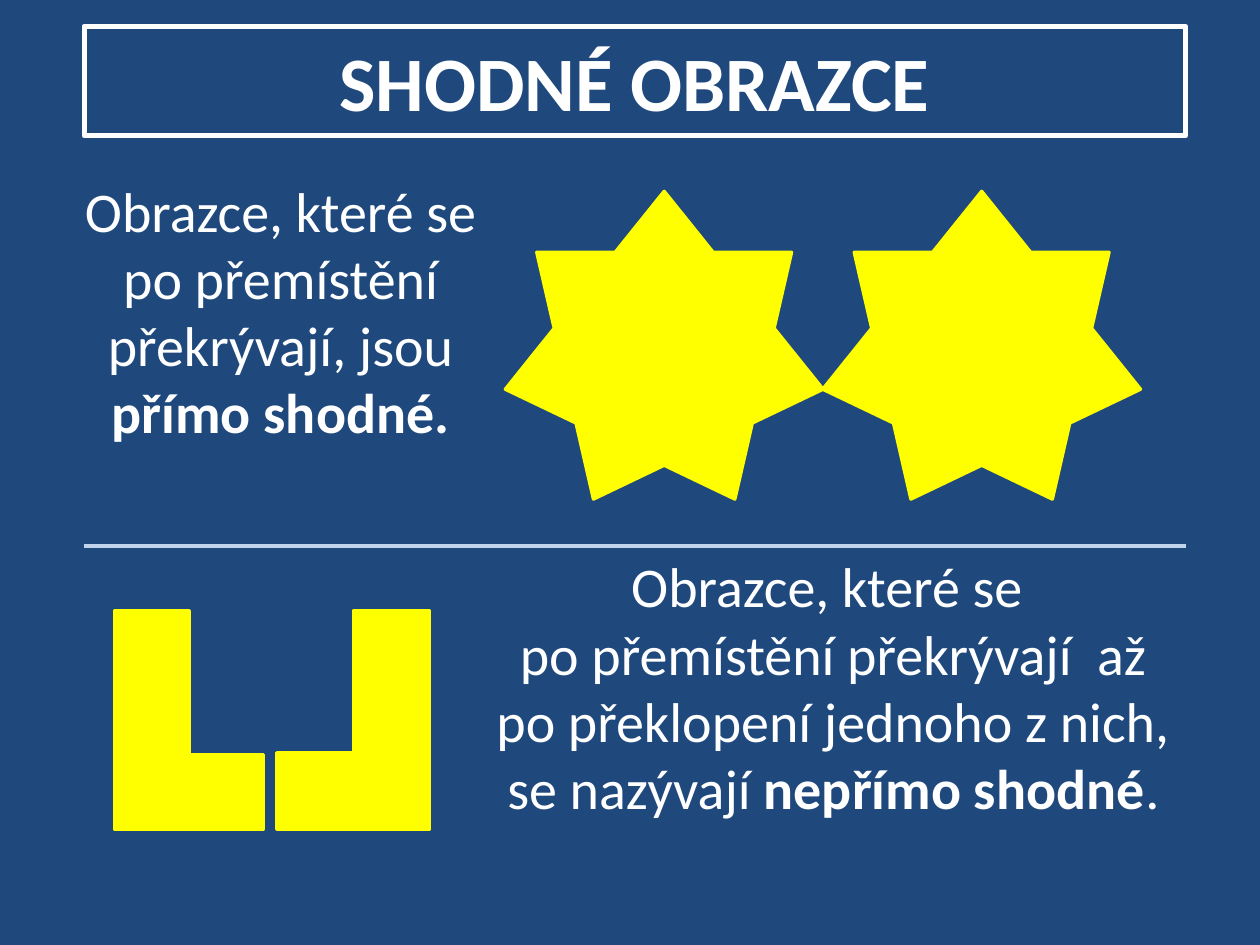
from lxml import etree
from pptx import Presentation
from pptx.dml.color import RGBColor
from pptx.enum.shapes import MSO_CONNECTOR, MSO_SHAPE
from pptx.enum.text import MSO_ANCHOR, MSO_AUTO_SIZE, PP_ALIGN
from pptx.oxml.ns import qn
from pptx.util import Cm, Pt

STAR, RECTANGLE = MSO_SHAPE.STAR_7_POINT, MSO_SHAPE.RECTANGLE
STRAIGHT = MSO_CONNECTOR.STRAIGHT
MIDDLE = MSO_ANCHOR.MIDDLE
FIT_SHAPE = MSO_AUTO_SIZE.SHAPE_TO_FIT_TEXT
CENTER = PP_ALIGN.CENTER

NAVY = RGBColor(0x1F, 0x49, 0x7D)
YELLOW = RGBColor(0xFF, 0xFF, 0x00)
WHITE = RGBColor(0xFF, 0xFF, 0xFF)
PALE_BLUE = RGBColor(0xC1, 0xD4, 0xEC)

LEFT, RIGHT = Cm(1.7), Cm(23.9)
DIVIDER_TOP = Cm(11)


def add_figure(kind, left, top, width, height):
    figure = slide.shapes.add_shape(kind, Cm(left), Cm(top), Cm(width), Cm(height))
    figure.shadow.inherit = False
    figure.fill.solid()
    figure.fill.fore_color.rgb = YELLOW
    figure.line.color.rgb = YELLOW
    figure.line.width = Pt(2)
    return figure


def write(paragraph, size, *pieces):
    paragraph.alignment = CENTER
    paragraph.font.name = "Calibri"
    paragraph.font.size = Pt(size)
    paragraph.font.color.rgb = WHITE
    for text, bold in pieces:
        run = paragraph.add_run()
        run.text = text
        run.font.bold = bold


prs = Presentation()
prs.slide_width, prs.slide_height = Cm(25.4), Cm(19.05)
slide = prs.slides.add_slide(prs.slide_layouts[6])
slide.background.fill.solid()
slide.background.fill.fore_color.rgb = NAVY

star_width = 6.4
for column in range(2):
    add_figure(STAR, 10.19 + column * star_width, 3.86, star_width, 6.2)

title = slide.shapes.add_shape(RECTANGLE, LEFT, Cm(0.53), RIGHT - LEFT, Cm(2.21))
title.shadow.inherit = False
title.fill.background()
title.line.color.rgb = WHITE
title.line.width = Pt(3)
title.text_frame.vertical_anchor = MIDDLE
write(title.text_frame.paragraphs[0], 44, ("SHODNÉ OBRAZCE", True))

direct = slide.shapes.add_textbox(Cm(1.14), Cm(3.43), Cm(9.04), Cm(7.19)).text_frame
direct.word_wrap = True
write(direct.paragraphs[0], 32,
      ("Obrazce, které se po přemístění překrývají, jsou ", False),
      ("přímo shodné.", True))

for left, width, flip in ((2.31, 3, "0"), (5.59, 3.07, "1")):
    corner = add_figure(RECTANGLE, left, 12.32, width, 4.39).element.spPr
    corner.find(qn("a:prstGeom")).set("prst", "corner")
    corner.find(qn("a:xfrm")).set("flipH", flip)

indirect = slide.shapes.add_textbox(Cm(9.7), DIVIDER_TOP, Cm(14.2), Cm(5.74)).text_frame
indirect.word_wrap = True
indirect.auto_size = FIT_SHAPE
write(indirect.paragraphs[0], 32, ("Obrazce, které se ", False))
write(indirect.add_paragraph(), 32,
      ("po přemístění překrývají  až po překlopení jednoho z nich, se nazývají ", False),
      ("nepřímo shodné", True),
      (".", False))

divider = slide.shapes.add_connector(STRAIGHT, LEFT, DIVIDER_TOP, RIGHT, DIVIDER_TOP)
divider.line.color.rgb = PALE_BLUE
divider.line.width = Pt(2.25)
etree.SubElement(divider.element.spPr, qn("a:effectLst"))

prs.save("out.pptx")
